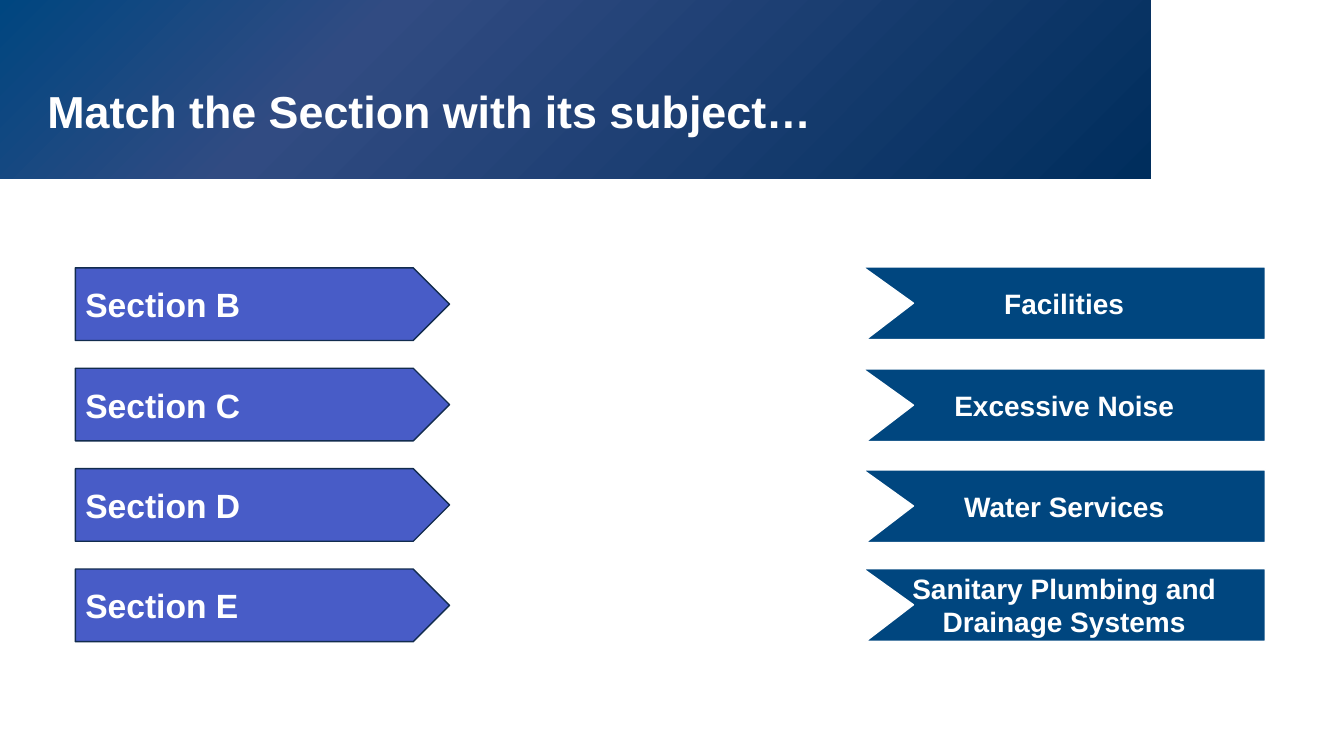
from copy import deepcopy

from pptx import Presentation
from pptx.dml.color import RGBColor
from pptx.enum.shapes import MSO_SHAPE
from pptx.enum.text import MSO_ANCHOR, MSO_AUTO_SIZE, PP_ALIGN
from pptx.oxml.ns import qn
from pptx.util import Cm, Pt

WHITE = RGBColor(0xFF, 0xFF, 0xFF)
NAVY = RGBColor(0x00, 0x46, 0x7F)
VIOLET = RGBColor(0x48, 0x5C, 0xC7)
EDGE = RGBColor(0x12, 0x2C, 0x4E)
BANNER = (
    (0, RGBColor(0x00, 0x46, 0x80)),
    (0.3, RGBColor(0x31, 0x4B, 0x82)),
    (1, RGBColor(0x00, 0x2E, 0x5D)),
)

SECTIONS = ("Section B", "Section C", "Section D", "Section E")
SUBJECTS = (
    (6.73, "Facilities"),
    (9.3, "Excessive Noise"),
    (11.84, "Water Services"),
    (14.33, "Sanitary Plumbing and Drainage Systems"),
)
TOP, STEP = 6.75, 2.53


class Board:
    font = "Arial"

    def __init__(self, slide):
        self.slide = slide
        self.shapes = slide.shapes

    def label(self, shape, text, size, align, anchor=MSO_ANCHOR.MIDDLE):
        frame = shape.text_frame
        frame.word_wrap = True
        frame.auto_size = MSO_AUTO_SIZE.NONE
        frame.vertical_anchor = anchor
        para = frame.paragraphs[0]
        para.alignment = align
        run = para.add_run()
        run.text = text
        run.font.name = self.font
        run.font.size = Pt(size)
        run.font.bold = True
        run.font.color.rgb = WHITE

    def paint(self, shape, fill, line):
        shape.shadow.inherit = False
        shape.fill.solid()
        shape.fill.fore_color.rgb = fill
        shape.line.color.rgb = line
        shape.line.width = Pt(1)

    def banner(self, width, height):
        """Add the gradient band and send it behind everything else."""
        band = self.shapes.add_shape(
            MSO_SHAPE.RECTANGLE, 0, 0, Cm(width), Cm(height))
        band.shadow.inherit = False
        band.line.fill.background()
        band.fill.gradient()
        band.fill.gradient_angle = 315
        stops = band._element.spPr.find(".//" + qn("a:gsLst"))
        stops.insert(1, deepcopy(stops[0]))
        for stop, (place, color) in zip(band.fill.gradient_stops, BANNER):
            stop.position = place
            stop.color.rgb = color
        self.shapes._spTree.insert(2, band._element)

    def title(self, text):
        head = self.shapes.title
        head.left, head.top = Cm(0.94), Cm(0.86)
        head.width, head.height = Cm(26), Cm(2.72)
        self.label(head, text, 32, PP_ALIGN.LEFT, MSO_ANCHOR.BOTTOM)

    def tab(self, top, text):
        shape = self.shapes.add_shape(
            MSO_SHAPE.PENTAGON, Cm(1.9), Cm(top), Cm(9.43), Cm(1.83))
        self.paint(shape, VIOLET, EDGE)
        self.label(shape, text, 24, PP_ALIGN.LEFT)

    def flag(self, top, text):
        """Add a bar with a notch cut into its left end."""
        left, right, low = 21.75, 31.89, top + 1.83
        points = ((right, top), (right, low), (left + 0.07, low),
                  (left + 1.27, top + 0.91))
        outline = self.shapes.build_freeform(Cm(left), Cm(top))
        outline.add_line_segments([(Cm(x), Cm(y)) for x, y in points])
        shape = outline.convert_to_shape()
        self.paint(shape, NAVY, WHITE)
        self.label(shape, text, 20, PP_ALIGN.CENTER)


def main():
    deck = Presentation()
    deck.slide_width, deck.slide_height = Cm(33.87), Cm(19.05)
    board = Board(deck.slides.add_slide(deck.slide_layouts[5]))
    board.banner(29, 4.5)
    board.title("Match the Section with its subject…")
    for row, name in enumerate(SECTIONS):
        board.tab(TOP + row * STEP, name)
    for top, name in SUBJECTS:
        board.flag(top, name)
    deck.save("out.pptx")


if __name__ == "__main__":
    main()
